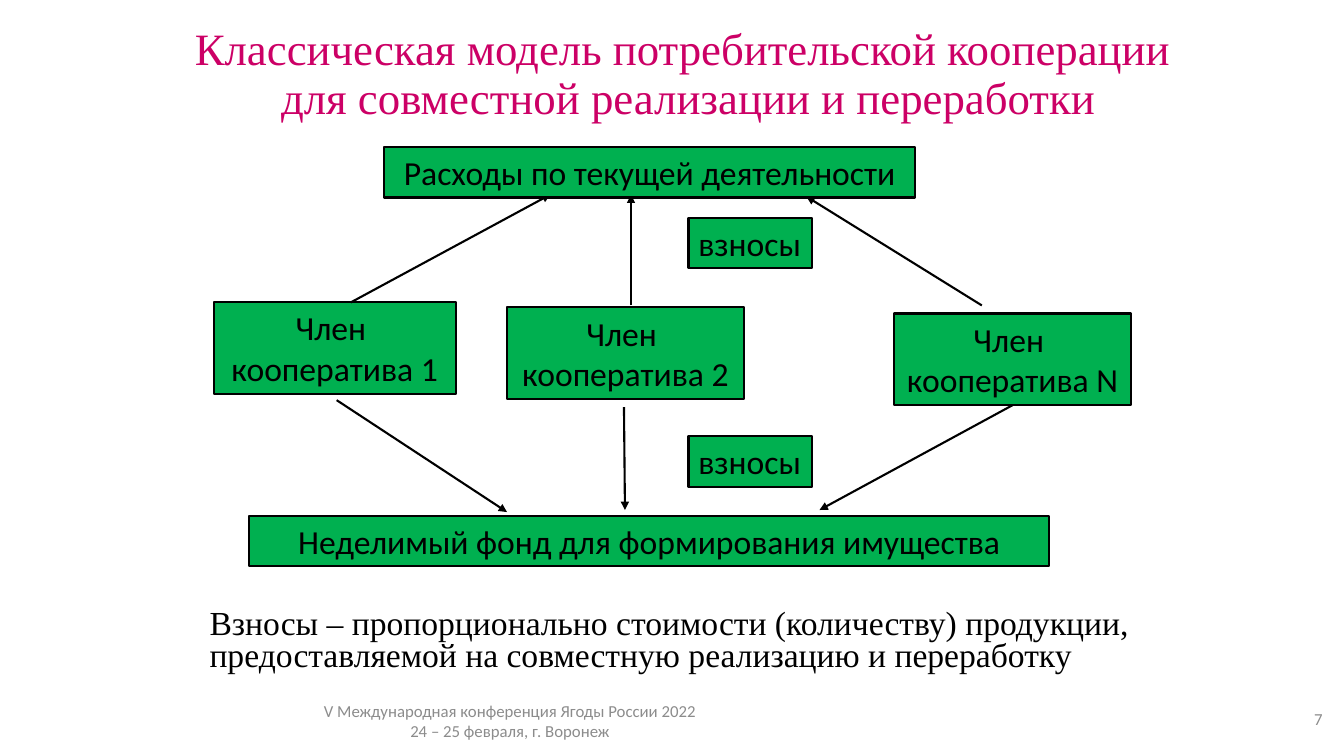
from lxml import etree
from pptx import Presentation
from pptx import util as u
from pptx.dml.color import RGBColor
from pptx.enum import shapes, text
from pptx.oxml import ns

PINK = RGBColor(0xCC, 0x00, 0x66)
GREEN = RGBColor(0x00, 0xB0, 0x50)
BLACK = RGBColor(0x00, 0x00, 0x00)
GREY = RGBColor(0x8C, 0x8C, 0x8C)
SANS, SERIF = "Calibri", "Times New Roman"
LEFT, MID, RIGHT = text.PP_ALIGN.LEFT, text.PP_ALIGN.CENTER, text.PP_ALIGN.RIGHT
TOP, HALF = text.MSO_ANCHOR.TOP, text.MSO_ANCHOR.MIDDLE
COLS, ROWS = 133.33, 75


class Board:
    """Slide on a grid of COLS by ROWS cells."""

    def __init__(self, deck):
        self.wide, self.high = deck.slide_width, deck.slide_height
        self.slide = deck.slides.add_slide(deck.slide_layouts[5])

    def col(self, n):
        return round(self.wide * n / COLS)

    def row(self, n):
        return round(self.high * n / ROWS)

    def area(self, x, y, w, h):
        return self.col(x), self.row(y), self.col(w), self.row(h)

    def label(self, shape, lines, size, face, color, align=MID, anchor=TOP,
              space=1.0, wrap=True):
        frame = shape.text_frame
        frame.text = "\n".join(lines)
        frame.word_wrap = wrap
        frame.auto_size = text.MSO_AUTO_SIZE.NONE
        frame.vertical_anchor = anchor
        for para in frame.paragraphs:
            para.alignment = align
            para.line_spacing = space
            para.font.size = u.Pt(size)
            para.font.name = face
            para.font.color.rgb = color

    def title(self, place, lines):
        head = self.slide.shapes.title
        head.left, head.top, head.width, head.height = self.area(*place)
        self.label(head, lines, 32, SERIF, PINK, space=0.9)

    def note(self, place, lines, *style, **more):
        field = self.slide.shapes.add_textbox(*self.area(*place))
        self.label(field, lines, *style, **more)

    def box(self, place, lines, **more):
        rect = self.slide.shapes.add_shape(
            shapes.MSO_SHAPE.RECTANGLE, *self.area(*place))
        rect.shadow.inherit = False
        rect.fill.solid()
        rect.fill.fore_color.rgb = GREEN
        rect.line.color.rgb = BLACK
        rect.line.width = u.Pt(1.5)
        self.label(rect, lines, 24, SANS, BLACK, **more)
        return rect

    def arrow(self, x1, y1, x2, y2):
        line = self.slide.shapes.add_connector(
            shapes.MSO_CONNECTOR.STRAIGHT,
            self.col(x1), self.row(y1), self.col(x2), self.row(y2))
        line.line.color.rgb = BLACK
        line.line.width = u.Pt(1.5)
        props = line.element.spPr
        etree.SubElement(props.find(ns.qn("a:ln")), ns.qn("a:tailEnd"),
                         type="triangle")
        etree.SubElement(props, ns.qn("a:effectLst"))
        return line


def main():
    deck = Presentation()
    deck.slide_width, deck.slide_height = u.Inches(13.33), u.Inches(7.5)
    board = Board(deck)

    # Title
    board.title((7.7, 2.2, 121.2, 10.7),
                ["Классическая модель потребительской кооперации ",
                 "для совместной реализации и переработки"])

    # Fund and members
    board.box((24.7, 51.2, 79.4, 5), ["Неделимый фонд для формирования имущества"])
    for name, x, y, w in (("1", 21.2, 30, 24), ("2", 50.3, 30.5, 23.5),
                          ("N", 88.7, 31.1, 23.5)):
        last = board.box((x, y, w, 9.1), ["Член ", f"кооператива {name}"])

    # Flows up to expenses and down to the fund
    for ends in ((34.8, 30, 54.6, 19.3), (62.6, 30.3, 62.6, 19.3),
                 (97.4, 30.3, 80, 19.5), (33.4, 39.7, 50.3, 50.8),
                 (61.9, 40.4, 62, 50.6)):
        board.arrow(*ends)
    board.arrow(100.5, 40.2, 81.3, 50.6).begin_connect(last, 2)

    # Fees and expenses
    for y in (21.6, 43.3):
        board.box((68.3, y, 12.3, 5), ["взносы"], align=LEFT, wrap=False)
    board.box((38.1, 14.6, 52.7, 5), ["Расходы по текущей деятельности"])

    # Explanation
    board.note((19.8, 60, 99.9, 7.5),
               ["Взносы – пропорционально стоимости (количеству) продукции, "
                "предоставляемой на совместную реализацию и переработку"],
               24, SERIF, BLACK, align=LEFT, space=0.8)

    # Footer and page number
    board.note((21.2, 69.5, 58.8, 4),
               ["V Международная конференция Ягоды России 2022",
                "24 – 25 февраля, г. Воронеж"], 12, SANS, GREY, anchor=HALF)
    board.note((124.2, 69.3, 8, 4), ["7"], 12, SANS, GREY, align=RIGHT, anchor=HALF)

    deck.save("out.pptx")


if __name__ == "__main__":
    main()
